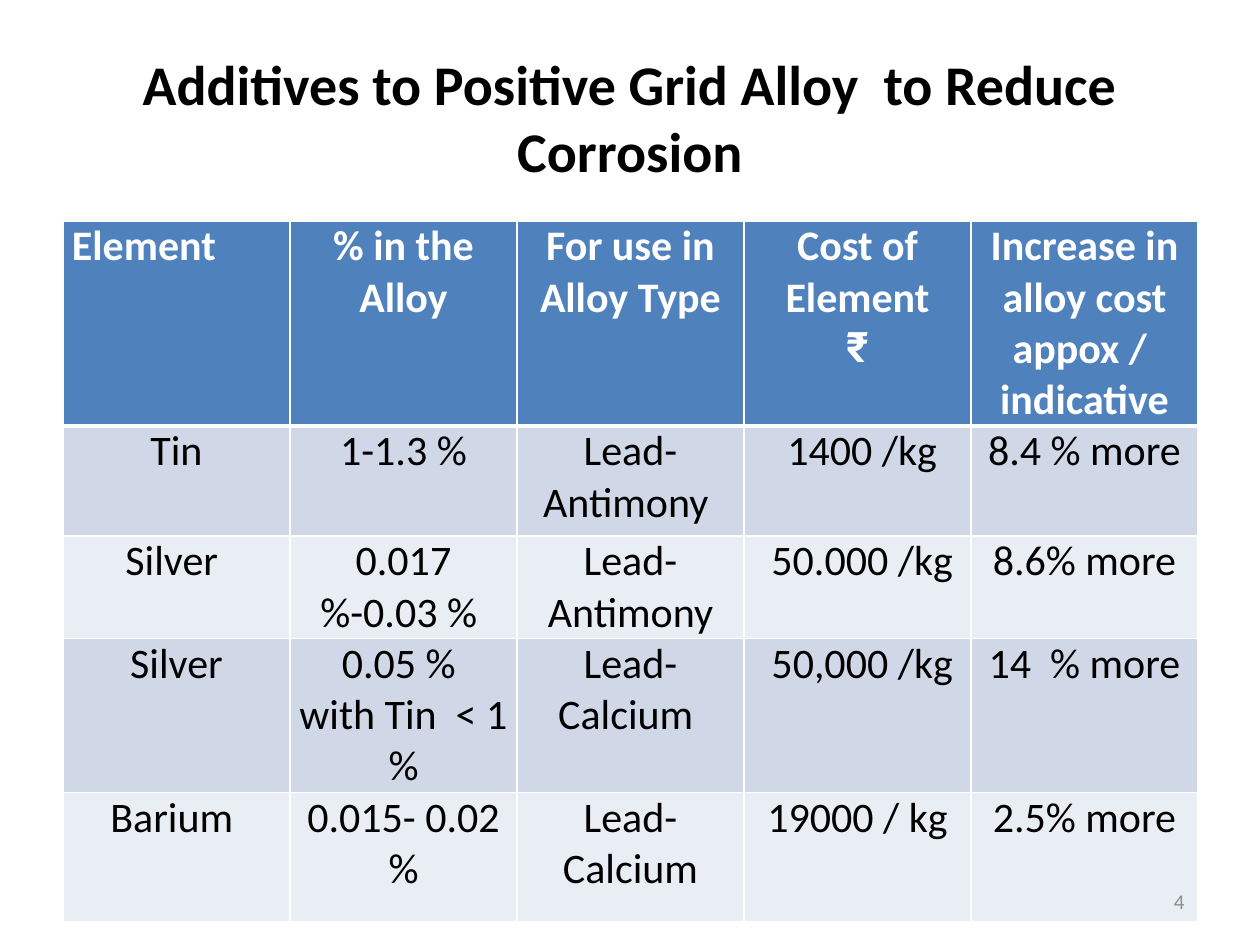
from dataclasses import dataclass

from lxml import etree
from pptx import Presentation
from pptx import util as u
from pptx.dml.color import RGBColor
from pptx.enum import text
from pptx.oxml import ns

SCALE = 914400 / 126
FONT = "Calibri"
COLORS = {
    "ink": "000000",
    "white": "FFFFFF",
    "head": "4F81BD",
    "odd": "D0D8E8",
    "even": "E9EDF4",
    "page": "8C8C8C",
}


@dataclass(frozen=True)
class Box:
    left: int
    top: int
    width: int
    height: int

    def place(self) -> list[u.Emu]:
        return [px(n) for n in (self.left, self.top, self.width, self.height)]


@dataclass(frozen=True)
class Row:
    height: int
    fill: str
    cells: tuple[str, ...]


ROWS = (
    Row(193, "head", ("Element", "% in the Alloy", "For use in\nAlloy Type",
                      "Cost of Element\n₹", "Increase in alloy cost appox /  indicative")),
    Row(110, "odd", ("Tin", "1-1.3 %", "Lead-Antimony ", " 1400 /kg", "8.4 % more")),
    Row(98, "even", ("Silver ", "0.017 %-0.03 % ", "Lead-Antimony", " 50.000 /kg", "8.6% more")),
    Row(146, "odd", ("Silver", "0.05 % \nwith Tin  < 1 %", "Lead-Calcium ", " 50,000 /kg", "14  % more")),
    Row(129, "even", ("Barium ", "0.015- 0.02 %", "Lead-Calcium", "19000 / kg", "2.5% more")),
)


def px(n: int) -> u.Emu:
    return u.Emu(round(n * SCALE))


def rgb(name: str) -> RGBColor:
    return RGBColor.from_string(COLORS[name])


def style(par, size: int, color: str, bold: bool, align) -> None:
    par.alignment = align
    font = par.font
    font.name = "Roboto" if par.text == "₹" else FONT
    font.size = u.Pt(size)
    font.bold = bold
    font.color.rgb = rgb(color)


def edge(cell, head: bool) -> None:
    props = cell._tc.get_or_add_tcPr()
    for i, side in enumerate("LRTB"):
        wide = 3 if head and side == "B" else 1
        line = etree.Element(ns.qn(f"a:ln{side}"), w=str(u.Pt(wide)))
        fill = etree.SubElement(line, ns.qn("a:solidFill"))
        etree.SubElement(fill, ns.qn("a:srgbClr"), val=COLORS["white"])
        props.insert(i, line)


def fill_cell(cell, words: str, row: Row, first: bool) -> None:
    head = row.fill == "head"
    cell.text = words
    cell.margin_left = cell.margin_right = px(9)
    cell.margin_top = cell.margin_bottom = 0
    cell.fill.solid()
    cell.fill.fore_color.rgb = rgb(row.fill)
    edge(cell, head)
    align = text.PP_ALIGN.LEFT if head and first else text.PP_ALIGN.CENTER
    for par in cell.text_frame.paragraphs:
        style(par, 24, "white" if head else "ink", head, align)


def add_grid(slide, box: Box) -> None:
    count = len(ROWS[0].cells)
    table = slide.shapes.add_table(len(ROWS), count, *box.place()).table
    for col in table.columns:
        col.width = px(box.width // count)
    for r, row in enumerate(ROWS):
        table.rows[r].height = px(row.height)
        for c, words in enumerate(row.cells):
            fill_cell(table.cell(r, c), words, row, c == 0)


def add_title(slide, box: Box, words: str) -> None:
    title = slide.shapes.title
    title.left, title.top, title.width, title.height = box.place()
    frame = title.text_frame
    frame.text = words
    frame.auto_size = text.MSO_AUTO_SIZE.NONE
    frame.vertical_anchor = text.MSO_ANCHOR.MIDDLE
    style(frame.paragraphs[0], 32, "ink", True, text.PP_ALIGN.CENTER)


def add_page(slide, box: Box, words: str) -> None:
    frame = slide.shapes.add_textbox(*box.place()).text_frame
    frame.text = words
    frame.word_wrap = True
    frame.vertical_anchor = text.MSO_ANCHOR.MIDDLE
    style(frame.paragraphs[0], 12, "page", False, text.PP_ALIGN.RIGHT)


def main() -> None:
    deck = Presentation()
    deck.slide_width, deck.slide_height = px(1260), px(945)
    slide = deck.slides.add_slide(deck.slide_layouts[5])
    add_title(slide, Box(63, 38, 1134, 158), "Additives to Positive Grid Alloy  to Reduce Corrosion")
    add_grid(slide, Box(63, 221, 1135, sum(row.height for row in ROWS)))
    add_page(slide, Box(903, 876, 294, 50), "4")
    deck.save("out.pptx")


if __name__ == "__main__":
    main()
